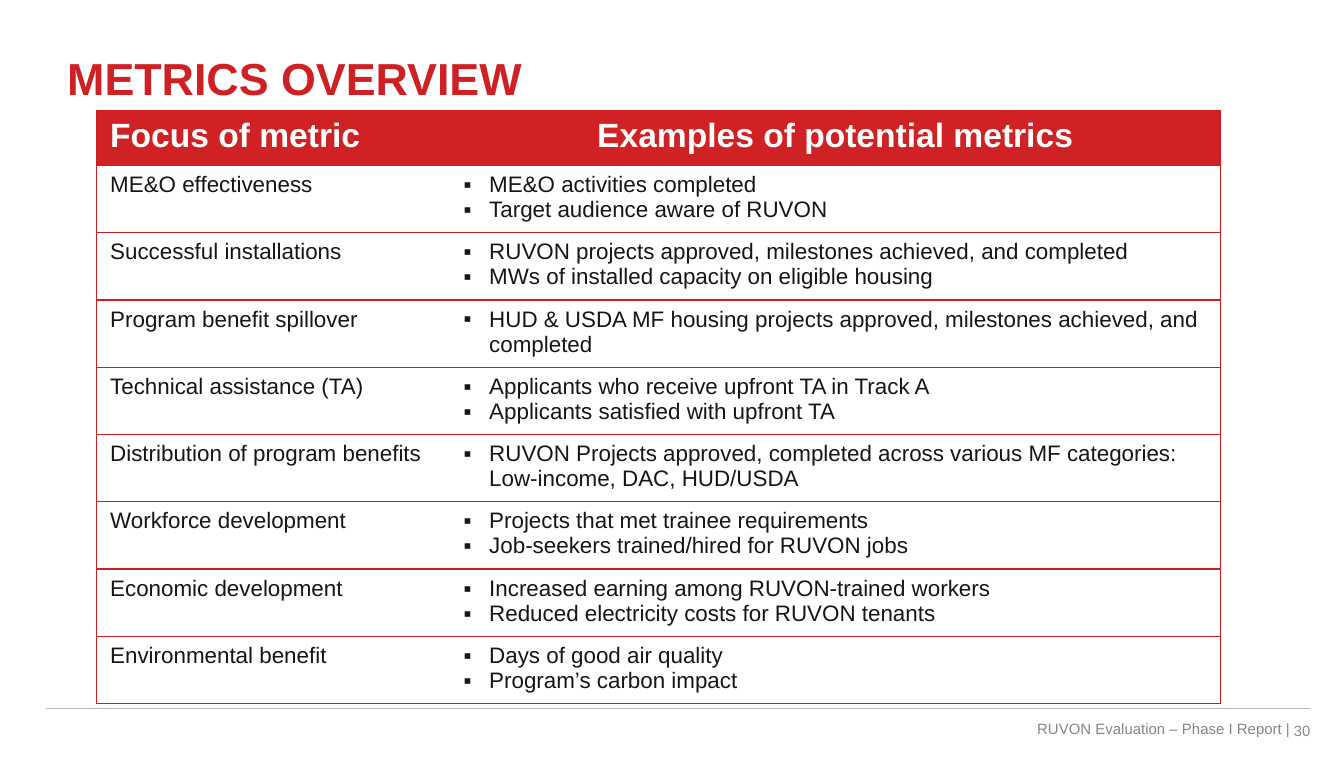
from pptx import Presentation
from pptx.dml.color import RGBColor
from pptx.enum.shapes import MSO_CONNECTOR as Connector
from pptx.enum.text import MSO_ANCHOR as Anchor, PP_ALIGN as Align
from pptx.oxml.xmlchemy import OxmlElement
from pptx.util import Inches, Pt

COLORS = {
    "title": "CF2124", "header": "D02224", "border": "D01C1F",
    "header_text": "FFFFFE", "body": "141619", "paper": "FFFFFF",
    "rule": "BAB3BC", "footer": "84848D", "number": "8C8C8C",
}
METRICS = [
    ("ME&O effectiveness",
     ["ME&O activities completed", "Target audience aware of RUVON"]),
    ("Successful installations",
     ["RUVON projects approved, milestones achieved, and completed",
      "MWs of installed capacity on eligible housing"]),
    ("Program benefit spillover",
     ["HUD & USDA MF housing projects approved, milestones achieved, and completed"]),
    ("Technical assistance (TA)",
     ["Applicants who receive upfront TA in Track A",
      "Applicants satisfied with upfront TA"]),
    ("Distribution of program benefits",
     ["RUVON Projects approved, completed across various MF categories: "
      "Low-income, DAC, HUD/USDA"]),
    ("Workforce development",
     ["Projects that met trainee requirements",
      "Job-seekers trained/hired for RUVON jobs"]),
    ("Economic development",
     ["Increased earning among RUVON-trained workers",
      "Reduced electricity costs for RUVON tenants"]),
    ("Environmental benefit",
     ["Days of good air quality", "Program’s carbon impact"]),
]


def write(frame, lines, size=12, color="body", bold=False, align=Align.LEFT,
          anchor=Anchor.TOP, bullet=None):
    frame.word_wrap = True
    for index, line in enumerate(lines):
        paragraph = frame.add_paragraph() if index else frame.paragraphs[0]
        paragraph.alignment = align
        run = paragraph.add_run()
        run.text = line
        run.font.name = "Arial"
        run.font.size = Pt(size)
        run.font.bold = bold
        run.font.color.rgb = RGBColor.from_string(COLORS[color])
        if bullet:
            props = paragraph._p.get_or_add_pPr()
            props.set("marL", str(Inches(0.19)))
            props.set("indent", str(-Inches(0.19)))
            for tag, key, value in [("a:buFont", "typeface", "Arial"),
                                    ("a:buChar", "char", bullet)]:
                mark = OxmlElement(tag)
                mark.set(key, value)
                props.append(mark)
    frame.vertical_anchor = anchor


def set_borders(cell, sides):
    props = cell._tc.get_or_add_tcPr()
    for side in "LRTB":
        line = OxmlElement(f"a:ln{side}")
        if side in sides:
            line.set("w", str(Pt(0.75)))
            fill = OxmlElement("a:solidFill")
            color = OxmlElement("a:srgbClr")
            color.set("val", COLORS["border"])
            fill.append(color)
        else:
            fill = OxmlElement("a:noFill")
        line.append(fill)
        props.append(line)


deck = Presentation()
deck.slide_width, deck.slide_height = Inches(10), Inches(5.63)
slide = deck.slides.add_slide(deck.slide_layouts[5])

title = slide.shapes.title
title.left, title.top = Inches(0.4), Inches(0.32)
title.width, title.height = Inches(9), Inches(0.51)
write(title.text_frame, ["METRICS OVERVIEW"], size=24, color="title", bold=True,
      anchor=Anchor.MIDDLE)

footer_rule = slide.shapes.add_connector(
    Connector.STRAIGHT, Inches(0.34), Inches(5.27), Inches(9.75), Inches(5.27))
footer_rule.line.color.rgb = RGBColor.from_string(COLORS["rule"])
footer_rule.line.width = Pt(0.5)
footer_rule._element.spPr.append(OxmlElement("a:effectLst"))

for text, color, left, top, width in [
    ("RUVON Evaluation – Phase I Report |", "footer", 6.32, 5.27, 3.38),
    ("30", "number", 9.42, 5.28, 0.43),
]:
    note = slide.shapes.add_textbox(Inches(left), Inches(top), Inches(width), Inches(0.3))
    write(note.text_frame, [text], size=8, color=color, align=Align.RIGHT,
          anchor=Anchor.MIDDLE)

metrics = slide.shapes.add_table(
    len(METRICS) + 1, 2, Inches(0.72), Inches(0.82), Inches(8.36), Inches(3.69)).table
metrics.columns[0].width, metrics.columns[1].width = Inches(2.63), Inches(5.73)
for index, row in enumerate(metrics.rows):
    row.height = Inches(0.41)
    for cell, outer_side in zip(row.cells, "LR"):
        set_borders(cell, outer_side + "TB")
        cell.fill.solid()
        cell.fill.fore_color.rgb = RGBColor.from_string(
            COLORS["paper" if index else "header"])

for column, (heading, align) in enumerate([
    ("Focus of metric", Align.LEFT),
    ("Examples of potential metrics", Align.CENTER),
]):
    write(metrics.cell(0, column).text_frame, [heading], size=18, color="header_text",
          bold=True, align=align)

for index, (focus, examples) in enumerate(METRICS, start=1):
    write(metrics.cell(index, 0).text_frame, [focus])
    write(metrics.cell(index, 1).text_frame, examples, bullet="▪")

deck.save("out.pptx")
